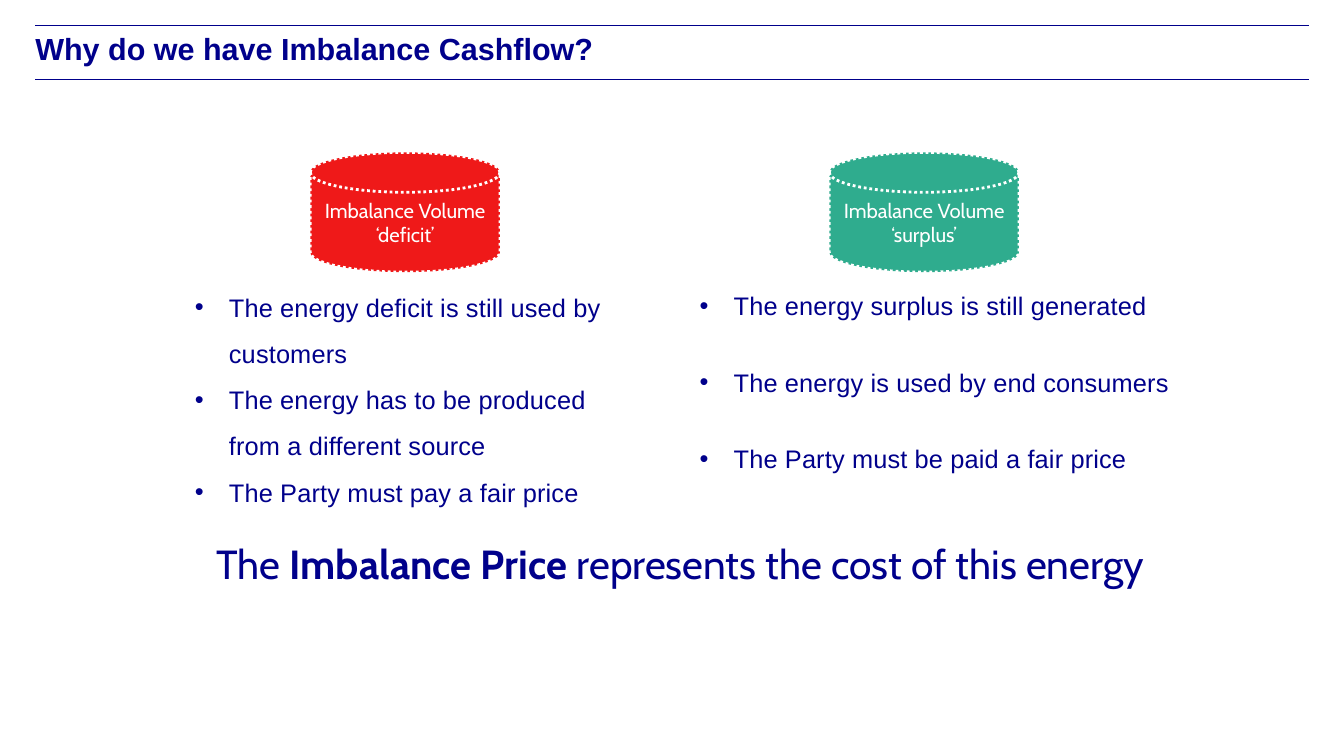
from lxml import etree
from pptx import Presentation, util as u
from pptx.dml.color import RGBColor
from pptx.enum import dml, shapes, text
from pptx.oxml.ns import qn

Cm, Pt = u.Cm, u.Pt
NAVY = RGBColor(0x00, 0x00, 0x8B)
RED = RGBColor(0xEE, 0x00, 0x00)
GREEN = RGBColor(0x19, 0xA4, 0x82)
WHITE = RGBColor(0xFF, 0xFF, 0xFF)

LEFT, RIGHT = 0.89, 32.99


def add_run(p, content, size=18.1, font="Arial", color=NAVY, bold=False, spacing=None):
    r = p.add_run()
    r.text = content
    r.font.size, r.font.name, r.font.bold = Pt(size), font, bold
    r.font.color.rgb = color
    if spacing:
        r._r.get_or_add_rPr().set("spc", str(spacing))


def add_box(s, x, y, w, h):
    tf = s.shapes.add_textbox(Cm(x), Cm(y), Cm(w), Cm(h)).text_frame
    tf.word_wrap = True
    tf.margin_left = tf.margin_top = tf.margin_right = tf.margin_bottom = 0
    return tf


def add_rule(s, y):
    line = s.shapes.add_connector(
        shapes.MSO_CONNECTOR.STRAIGHT, Cm(LEFT), Cm(y), Cm(RIGHT), Cm(y))
    line.line.color.rgb = NAVY
    line.line.width = Pt(0.5)
    etree.SubElement(line._element.spPr, qn("a:effectLst"))


def add_bullets(s, x, y, w, h, items, line_spacing, gap):
    tf = add_box(s, x, y, w, h)
    for i, item in enumerate(items):
        p = tf.add_paragraph() if i else tf.paragraphs[0]
        pPr = p._p.get_or_add_pPr()
        pPr.set("marL", str(Cm(0.89)))
        pPr.set("indent", str(-Cm(0.86)))
        etree.SubElement(pPr, qn("a:buFont")).set("typeface", "Arial")
        etree.SubElement(pPr, qn("a:buChar")).set("char", "•")
        p.line_spacing = line_spacing
        p.space_before = Pt(gap if i else 0)
        add_run(p, item, spacing=10)


def add_disk(s, x, color, kind):
    sp = s.shapes.add_shape(shapes.MSO_SHAPE.FLOWCHART_MAGNETIC_DISK,
                            Cm(x), Cm(3.84), Cm(4.78), Cm(3.02))
    sp.shadow.inherit = False
    sp.fill.solid()
    sp.fill.fore_color.rgb = color
    # Slightly transparent fill
    rgb = sp._element.spPr.find(qn("a:solidFill")).find(qn("a:srgbClr"))
    etree.SubElement(rgb, qn("a:alpha")).set("val", "90000")
    sp.line.color.rgb = WHITE
    sp.line.width = Pt(2)
    sp.line.dash_style = dml.MSO_LINE.ROUND_DOT
    tf = sp.text_frame
    tf.word_wrap = True
    tf.vertical_anchor = text.MSO_ANCHOR.MIDDLE
    for p, label in ((tf.paragraphs[0], "Imbalance Volume"), (tf.add_paragraph(), kind)):
        p.alignment = text.PP_ALIGN.CENTER
        add_run(p, label, size=14.5, font="Cabin", color=WHITE)


def main():
    prs = Presentation()
    prs.slide_width, prs.slide_height = Cm(33.87), Cm(19.05)
    s = prs.slides.add_slide(prs.slide_layouts[6])

    # Title between two rules
    for y in (0.64, 2.01):
        add_rule(s, y)
    tf = add_box(s, LEFT, 0.76, RIGHT - LEFT, 1.24)
    add_run(tf.paragraphs[0], "Why do we have Imbalance Cashflow?", size=21.8, bold=True)

    # Deficit and surplus columns
    add_disk(s, 7.82, RED, "‘deficit’")
    add_bullets(s, 4.88, 6.96, 11.02, 6.07, [
        "The energy deficit is still used by customers",
        "The energy has to be produced from a different source",
        "The Party must pay a fair price",
    ], line_spacing=Pt(33), gap=0)
    add_disk(s, 20.9, GREEN, "‘surplus’")
    add_bullets(s, 17.6, 7.31, 11.91, 5.72, [
        "The energy surplus is still generated",
        "The energy is used by end consumers",
        "The Party must be paid a fair price",
    ], line_spacing=1.0, gap=33)

    # Conclusion
    p = add_box(s, 4.88, 13.59, 24.54, 2.49).paragraphs[0]
    p.alignment = text.PP_ALIGN.CENTER
    for content, bold in (("The ", False), ("Imbalance Price ", True),
                          ("represents the cost of this energy", False)):
        add_run(p, content, size=29, font="Cabin", bold=bold)

    prs.save("out.pptx")


if __name__ == "__main__":
    main()
